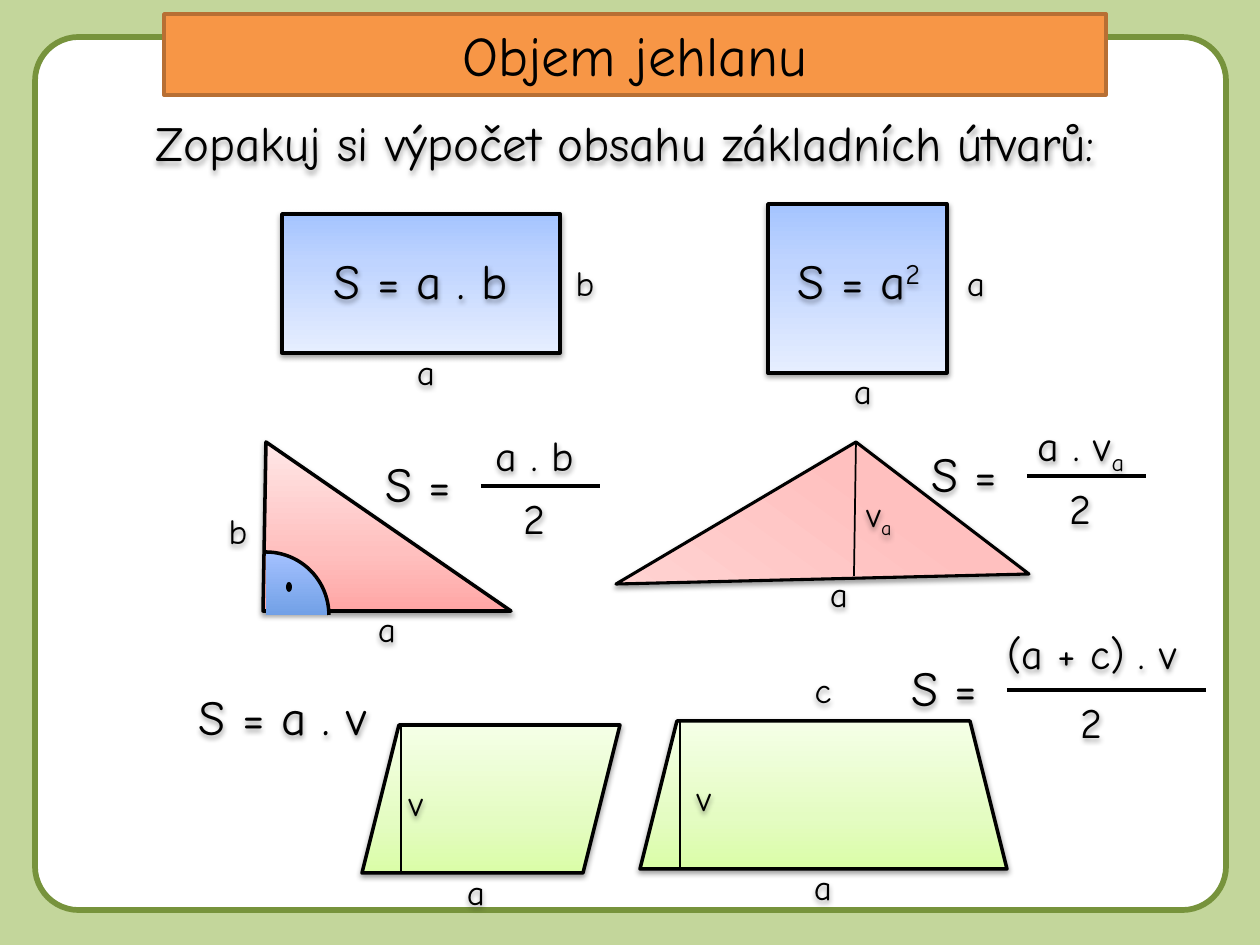
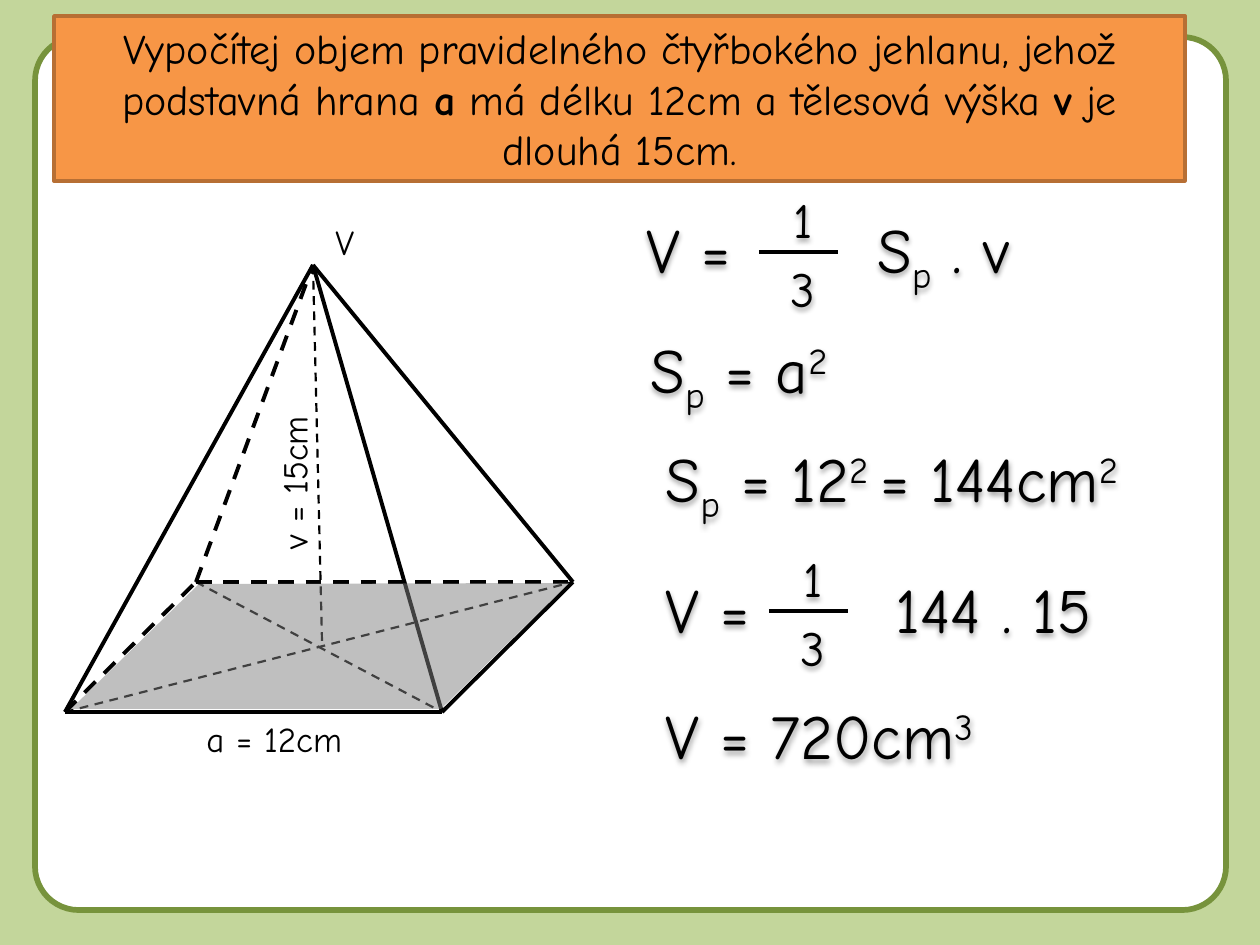
from lxml.etree import SubElement
from pptx import Presentation
from pptx.dml.color import RGBColor
from pptx.enum.dml import MSO_LINE
from pptx.enum.shapes import MSO_CONNECTOR, MSO_SHAPE
from pptx.enum.text import MSO_ANCHOR, PP_ALIGN
from pptx.oxml.ns import qn
from pptx.util import Emu, Pt

SCALE = 914400 / 126  # EMU per px
FONT = "Comic Neue"
BLACK = RGBColor(0x00, 0x00, 0x00)
WHITE = RGBColor(0xFF, 0xFF, 0xFF)
GREY = RGBColor(0x80, 0x80, 0x80)
PALE_GREEN = RGBColor(0xC3, 0xD6, 0x9B)
FRAME_GREEN = RGBColor(0x77, 0x93, 0x3C)
ORANGE = RGBColor(0xF7, 0x96, 0x46)
DARK_ORANGE = RGBColor(0xB7, 0x6F, 0x34)


def blend(*colours):
    return list(zip((0, 35, 100), map(RGBColor.from_string, colours)))


BLUES = blend("A4C4FF", "BFD4FF", "E6EEFF")
REDS = blend("FFA6A5", "FFC0BF", "FFE7E7")
SOFT_REDS = blend("FFB6B5", "FFC0BF", "FFD2D1")
GREENS = blend("DAFDA7", "E4FCC2", "F5FFE7")
BASELINES = {"sub": "-25000", "sup": "30000"}
FRAME_BOX = (35, 37, 1191, 873)

# Slide 1: areas of plane figures
AREA_TITLE = ((164, 14, 942, 81), ["Objem jehlanu"], 32)
AREA_HEADING = ((54, 106, 1142, 72), ["Zopakuj si výpočet obsahu základních útvarů:"], 28)
# preset, box, gradient, angle
PRESET_FIGURES = [
    (MSO_SHAPE.RECTANGLE, (282, 214, 278, 139), BLUES, 270),
    (MSO_SHAPE.RECTANGLE, (768, 204, 179, 169), BLUES, 270),
    (MSO_SHAPE.TRAPEZOID, (640, 721, 367, 148), GREENS, 90),
    (MSO_SHAPE.PARALLELOGRAM, (362, 725, 258, 148), GREENS, 90),
]
# corners, gradient, angle, line width
TRIANGLES = [
    ([(266, 442), (263, 611), (511, 611)], REDS, 90, 2),
    ([(856, 442), (616, 584), (1029, 574)], SOFT_REDS, 234, 1.75),
]
HEIGHTS = [
    ((856, 442), (854, 576), 1),
    ((680, 721), (680, 869), 1.25),
    ((401, 725), (401, 873), 0.75),
]
RIGHT_ANGLE_ARC = (203, 552, 126, 126)
RIGHT_ANGLE_DOT = (286, 582, 6, 10)
# centre x, top, text
SIDE_LABELS = [
    (426, 344, ["a"]), (585, 255, ["b"]),
    (863, 363, ["a"]), (976, 255, ["a"]),
    (387, 601, ["a"]), (238, 503, ["b"]),
    (839, 566, ["a"]), (879, 486, ["v", ("a", "sub")]),
    (704, 770, ["v"]), (823, 859, ["a"]), (823, 662, ["c"]),
    (416, 775, ["v"]), (476, 864, ["a"]),
]
AREA_FORMULAS = [
    (421, 244, ["S = a . b"]),
    (859, 244, ["S = a", ("2", "sup")]),
    (283, 680, ["S = a . v"]),
]
# bar left, bar right, bar y, text centre, numerator, numerator lift
AREA_FRACTIONS = [
    (481, 600, 486, 535, ["a . b"], 63),
    (1027, 1146, 476, 1081, ["a . v", ("a", "sub")], 63),
    (1007, 1206, 690, 1092, ["(a + c) . v"], 69),
]

# Slide 2: volume of a pyramid
TASK_TITLE = ((54, 16, 1131, 165), [
    "Vypočítej objem pravidelného čtyřbokého jehlanu, jehož podstavná hrana ",
    ("a", "bold"), " má délku 12cm a tělesová výška ", ("v", "bold"),
    " je dlouhá 15cm."], 24)
APEX = (313, 265)
FRONT_LEFT, FRONT_RIGHT = (65, 712), (442, 712)
BACK_LEFT, BACK_RIGHT = (196, 582), (573, 582)
CENTRE = (322, 641)
SOLID_EDGES = [(FRONT_LEFT, FRONT_RIGHT), (FRONT_RIGHT, BACK_RIGHT),
               (FRONT_LEFT, APEX), (APEX, FRONT_RIGHT), (APEX, BACK_RIGHT)]
HIDDEN_EDGES = [(BACK_LEFT, BACK_RIGHT), (FRONT_LEFT, BACK_LEFT), (BACK_LEFT, APEX)]
INNER_LINES = [(FRONT_LEFT, BACK_RIGHT), (BACK_LEFT, FRONT_RIGHT), (CENTRE, APEX)]
BASE = [(71, 709), (441, 709), (569, 583), (199, 584)]
# box, text, rotation
PYRAMID_LABELS = [
    ((194, 711, 208, 55), ["a = 12cm"], 0),
    ((323, 214, 59, 55), ["V"], 0),
    ((190, 430, 208, 55), ["v = 15cm"], 270),
]
# box, text, alignment
VOLUME_STEPS = [
    ((634, 204, 130, 89), ["V ="], PP_ALIGN.LEFT),
    ((865, 204, 200, 89), ["S", ("p", "sub"), " . v"], PP_ALIGN.LEFT),
    ((620, 324, 238, 89), ["S", ("p", "sub"), " = a", ("2", "sup")], PP_ALIGN.CENTER),
    ((610, 433, 576, 89), ["S", ("p", "sub"), " = 12", ("2 ", "sup"), "= 144cm",
                           ("2 ", "sup")], PP_ALIGN.CENTER),
    ((653, 564, 130, 89), ["V ="], PP_ALIGN.LEFT),
    ((883, 564, 260, 89), ["144 . 15"], PP_ALIGN.LEFT),
    ((562, 690, 515, 89), ["V = 720cm", ("3", "sup")], PP_ALIGN.CENTER),
]
THIRDS = [(759, 838, 252, 803), (769, 848, 611, 813)]


def px(*lengths):
    return [Emu(round(length * SCALE)) for length in lengths]


def add_shadow(shape):
    effects = SubElement(shape._element.spPr, qn("a:effectLst"))
    shadow = SubElement(effects, qn("a:outerShdw"), blurRad="40000", dist="20000",
                        dir="5400000", rotWithShape="0")
    colour = SubElement(shadow, qn("a:srgbClr"), val=str(BLACK))
    SubElement(colour, qn("a:alpha"), val="38000")


def set_line(shape, colour, width):
    shape.line.color.rgb = colour
    shape.line.width = Pt(width)


def write(shape, runs, size, alignment=PP_ALIGN.CENTER, anchor=MSO_ANCHOR.TOP):
    frame = shape.text_frame
    frame.word_wrap = True
    frame.vertical_anchor = anchor
    paragraph = frame.paragraphs[0]
    paragraph.alignment = alignment
    for item in runs:
        text, style = (item, "") if isinstance(item, str) else item
        run = paragraph.add_run()
        run.text = text
        formats = {"name": FONT, "size": Pt(size), "bold": style == "bold"}
        for name, value in formats.items():
            setattr(run.font, name, value)
        run.font.color.rgb = BLACK
        if style in BASELINES:
            run._r.get_or_add_rPr().set("baseline", BASELINES[style])


def add_text(slide, box, runs, size, alignment=PP_ALIGN.CENTER, shadow=True):
    shape = slide.shapes.add_textbox(*px(*box))
    write(shape, runs, size, alignment)
    if shadow:
        add_shadow(shape)
    return shape


def add_panel(slide, preset, box, fill, line=None, width=2):
    shape = slide.shapes.add_shape(preset, *px(*box))
    shape.shadow.inherit = False
    shape.fill.solid()
    shape.fill.fore_color.rgb = fill
    if line is None:
        shape.line.fill.background()
    else:
        set_line(shape, line, width)
    return shape


def add_outline(slide, corners):
    start, *others = corners
    builder = slide.shapes.build_freeform(*start, scale=SCALE)
    builder.add_line_segments(others, close=True)
    return builder.convert_to_shape()


def paint_figure(shape, stops, angle, width=2):
    shape.fill.gradient()
    shape.fill.gradient_angle = angle
    stop_list = shape._element.spPr.find(".//" + qn("a:gsLst"))
    stop_list.clear()
    for percent, colour in stops:
        stop = SubElement(stop_list, qn("a:gs"), pos=str(percent * 1000))
        SubElement(stop, qn("a:srgbClr"), val=str(colour))
    set_line(shape, BLACK, width)
    add_shadow(shape)


def add_line(slide, start, end, width, dash=None):
    line = slide.shapes.add_connector(MSO_CONNECTOR.STRAIGHT, *px(*start, *end))
    set_line(line, BLACK, width)
    if dash:
        line.line.dash_style = dash
    SubElement(line._element.spPr, qn("a:effectLst"))


def add_fraction(slide, left, right, y, centre, numerator, denominator, size, lift):
    add_line(slide, (left, y), (right, y), 2)
    for top, runs in ((y - lift, numerator), (y, denominator)):
        add_text(slide, (centre - 114, top, 228, 68), runs, size)


def add_framed_slide(presentation):
    slide = presentation.slides.add_slide(presentation.slide_layouts[6])
    slide.background.fill.solid()
    slide.background.fill.fore_color.rgb = PALE_GREEN
    frame = add_panel(slide, MSO_SHAPE.ROUNDED_RECTANGLE, FRAME_BOX, WHITE, FRAME_GREEN, 3.25)
    frame.adjustments[0] = 0.05
    return slide


def add_title(slide, box, runs, size):
    band = add_panel(slide, MSO_SHAPE.RECTANGLE, box, ORANGE, DARK_ORANGE)
    write(band, runs, size, anchor=MSO_ANCHOR.MIDDLE)


def build_areas(presentation):
    slide = add_framed_slide(presentation)
    add_text(slide, *AREA_HEADING)
    add_title(slide, *AREA_TITLE)
    # Figures
    for preset, box, stops, angle in PRESET_FIGURES:
        paint_figure(slide.shapes.add_shape(preset, *px(*box)), stops, angle)
    for corners, stops, angle, width in TRIANGLES:
        paint_figure(add_outline(slide, corners), stops, angle, width)
    for start, end, width in HEIGHTS:
        add_line(slide, start, end, width)
    # Right-angle mark
    arc = slide.shapes.add_shape(MSO_SHAPE.ARC, *px(*RIGHT_ANGLE_ARC))
    arc.shadow.inherit = False
    set_line(arc, BLACK, 2)
    add_panel(slide, MSO_SHAPE.OVAL, RIGHT_ANGLE_DOT, BLACK)
    # Labels and formulas
    for centre, top, runs in SIDE_LABELS:
        add_text(slide, (centre - 35, top, 70, 55), runs, 20)
    for centre, top, runs in AREA_FORMULAS:
        add_text(slide, (centre - 119, top, 238, 72), runs, 28)
    for left, right, y, centre, numerator, lift in AREA_FRACTIONS:
        add_text(slide, (left - 129, y - 39, 149, 74), ["S = "], 28)
        add_fraction(slide, left, right, y, centre, numerator, ["2"], 24, lift)


def build_volume(presentation):
    slide = add_framed_slide(presentation)
    add_title(slide, *TASK_TITLE)
    # Pyramid
    for edges, width, dash in ((SOLID_EDGES, 2.25, None),
                               (HIDDEN_EDGES, 2.25, MSO_LINE.DASH),
                               (INNER_LINES, 1.25, MSO_LINE.DASH)):
        for start, end in edges:
            add_line(slide, start, end, width, dash)
    for box, runs, rotation in PYRAMID_LABELS:
        add_text(slide, box, runs, 20, PP_ALIGN.LEFT, shadow=False).rotation = rotation
    # Calculation
    for box, runs, alignment in VOLUME_STEPS:
        add_text(slide, box, runs, 36, alignment)
    for left, right, y, centre in THIRDS:
        add_fraction(slide, left, right, y, centre, ["1"], ["3"], 28, 69)
    # Translucent base
    base = add_outline(slide, BASE)
    base.shadow.inherit = False
    base.fill.solid()
    base.fill.fore_color.rgb = GREY
    base.line.fill.background()
    colour = base._element.spPr.find(qn("a:solidFill")).find(qn("a:srgbClr"))
    SubElement(colour, qn("a:alpha"), val="50000")


def main():
    presentation = Presentation()
    presentation.slide_width, presentation.slide_height = px(1260, 945)
    build_areas(presentation)
    build_volume(presentation)
    presentation.save("out.pptx")


if __name__ == "__main__":
    main()
